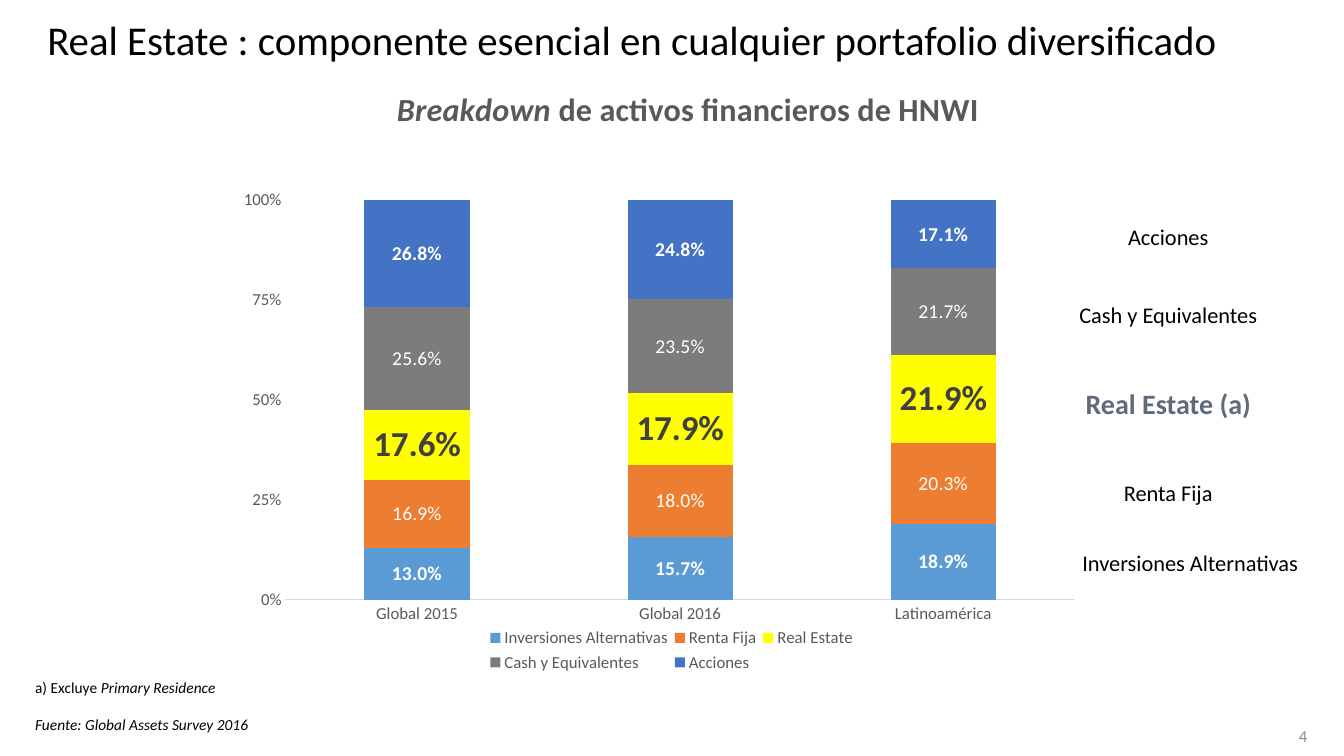
from dataclasses import dataclass

from lxml import etree
from pptx import Presentation
from pptx import util as u
from pptx.chart.data import CategoryChartData
from pptx.dml.color import RGBColor
from pptx.enum import chart as ch, text
from pptx.oxml.ns import qn


@dataclass(frozen=True)
class Theme:
    font: str = "Calibri"
    ink: str = "000000"
    axis_text: str = "595959"
    axis_line: str = "D9D9D9"
    accent: str = "5F6B7C"
    page_number: str = "8C8C8C"
    white: str = "FFFFFF"
    dark: str = "404040"
    title_size: float = 29.2
    chart_title_size: float = 23
    chart_size: float = 10
    label_size: float = 16
    accent_size: float = 20
    axis_size: float = 12
    value_size: float = 14
    value_accent_size: float = 25
    note_size: float = 11


T = Theme()


@dataclass(frozen=True)
class Box:
    left: float
    top: float
    width: float
    height: float

    def lengths(self) -> tuple:
        return tuple(u.Pt(v) for v in (self.left, self.top, self.width, self.height))


@dataclass(frozen=True)
class AssetClass:
    name: str
    values: tuple[float, ...]
    fill: str
    label_top: float
    bold: bool = False
    accent: bool = False
    label_width: float = 163


REGIONS = ("Global 2015", "Global 2016", "Latinoamérica")
ASSETS = (
    AssetClass("Inversiones Alternativas", (0.13, 0.157, 0.189), "5B9BD5", 388.8,
               bold=True, label_width=194.4),
    AssetClass("Renta Fija", (0.169, 0.18, 0.203), "ED7D31", 338.4),
    AssetClass("Real Estate", (0.176, 0.179, 0.219), "FFFF00", 272.2, bold=True, accent=True),
    AssetClass("Cash y Equivalentes", (0.256, 0.235, 0.217), "7C7C7C", 211.7),
    AssetClass("Acciones", (0.268, 0.248, 0.171), "4472C4", 155.5, bold=True),
)


def style(font, size: float, color: str, bold: bool = False, italic: bool = False) -> None:
    font.name, font.size = T.font, u.Pt(size)
    font.bold, font.italic = bold, italic
    font.color.rgb = RGBColor.from_string(color)


def add_text(s, box: Box, content: str, size: float, color: str,
             align=text.PP_ALIGN.CENTER, anchor=text.MSO_ANCHOR.TOP, bold: bool = False):
    tf = s.shapes.add_textbox(*box.lengths()).text_frame
    tf.word_wrap = True
    tf.vertical_anchor = anchor
    tf.text = content
    for p in tf.paragraphs:
        p.alignment = align
        for r in p.runs:
            style(r.font, size, color, bold)
    return tf


def set_layout(parent, index: int, box: Box, inner: bool = False) -> None:
    """Place a chart part by fractions of the chart area."""
    for old in parent.findall(qn("c:layout")):
        parent.remove(old)
    layout = etree.Element(qn("c:layout"))
    manual = etree.SubElement(layout, qn("c:manualLayout"))
    parts = [("layoutTarget", "inner")] if inner else []
    parts += [("xMode", "edge"), ("yMode", "edge"), ("x", box.left), ("y", box.top),
              ("w", box.width), ("h", box.height)]
    for tag, value in parts:
        etree.SubElement(manual, qn(f"c:{tag}")).set("val", str(value))
    parent.insert(index, layout)


def style_axes(chart) -> None:
    for axis in (chart.category_axis, chart.value_axis):
        axis.major_tick_mark = axis.minor_tick_mark = ch.XL_TICK_MARK.NONE
        axis.has_major_gridlines = False
        style(axis.tick_labels.font, T.axis_size, T.axis_text)
    line = chart.category_axis.format.line
    line.color.rgb = RGBColor.from_string(T.axis_line)
    line.width = u.Pt(0.75)
    values = chart.value_axis
    values.format.line.fill.background()
    values.minimum_scale, values.maximum_scale, values.major_unit = 0, 1, 0.25
    values.tick_labels.number_format = "0%"
    values.tick_labels.number_format_is_linked = False


def style_series(series, asset: AssetClass) -> None:
    series.format.fill.solid()
    series.format.fill.fore_color.rgb = RGBColor.from_string(asset.fill)
    labels = series.data_labels
    labels.show_value = True
    labels.number_format, labels.number_format_is_linked = "0.0%", False
    labels.position = ch.XL_LABEL_POSITION.CENTER
    style(labels.font, T.value_accent_size if asset.accent else T.value_size,
          T.dark if asset.accent else T.white, asset.bold)


def add_breakdown_chart(s) -> None:
    data = CategoryChartData(number_format="0.0%")
    data.categories = REGIONS
    for asset in ASSETS:
        data.add_series(asset.name, asset.values)
    box = Box(159.8, 56.6, 640, 427)
    chart = s.shapes.add_chart(ch.XL_CHART_TYPE.COLUMN_STACKED_100, *box.lengths(), data).chart
    style(chart.font, T.chart_size, T.ink)

    p = chart.chart_title.text_frame.paragraphs[0]
    for content, italic in (("Breakdown", True), (" de activos financieros de HNWI", False)):
        r = p.add_run()
        r.text = content
        style(r.font, T.chart_title_size, T.axis_text, True, italic)

    style_axes(chart)
    plot = chart.plots[0]
    plot.gap_width, plot.overlap, plot.vary_by_categories = 150, 100, False
    for series, asset in zip(plot.series, ASSETS):
        style_series(series, asset)

    chart.has_legend = True
    legend = chart.legend
    legend.position = ch.XL_LEGEND_POSITION.BOTTOM
    legend.include_in_layout = False
    style(legend.font, T.axis_size, T.axis_text)

    chart_xml = chart.element.find(qn("c:chart"))
    set_layout(chart_xml.find(qn("c:title")), 1, Box(0.19, 0.01, 0.65, 0.1))
    set_layout(chart_xml.find(qn("c:plotArea")), 0, Box(0.069, 0.202, 0.881, 0.669), inner=True)
    set_layout(chart_xml.find(qn("c:legend")), 1, Box(0.29, 0.91, 0.42, 0.09))


def add_notes(s) -> None:
    tf = add_text(s, Box(18, 481, 826.6, 47.5),
                  "a) Excluye \nFuente: Global Assets Survey 2016",
                  T.note_size, T.ink, text.PP_ALIGN.LEFT)
    note, source = tf.paragraphs
    r = note.add_run()
    r.text = "Primary Residence"
    style(r.font, T.note_size, T.ink, italic=True)
    source.runs[0].font.italic = True
    source.space_before = u.Pt(13.4)


def main() -> None:
    prs = Presentation()
    prs.slide_width, prs.slide_height = u.Pt(960), u.Pt(540)
    s = prs.slides.add_slide(prs.slide_layouts[6])

    title = add_text(s, Box(-13, -20.2, 928.8, 69.8),
                     "Real Estate : componente esencial en cualquier portafolio diversificado",
                     T.title_size, T.ink, anchor=text.MSO_ANCHOR.BOTTOM)
    title.paragraphs[0].line_spacing = 0.9
    add_breakdown_chart(s)
    for asset in reversed(ASSETS):
        add_text(s, Box(753, asset.label_top, asset.label_width, 31.5 if asset.accent else 26.6),
                 asset.name + (" (a)" if asset.accent else ""),
                 T.accent_size if asset.accent else T.label_size,
                 T.accent if asset.accent else T.ink, bold=asset.accent)
    add_notes(s)
    add_text(s, Box(717, 511.2, 224, 28.8), "4", T.axis_size, T.page_number,
             text.PP_ALIGN.RIGHT, text.MSO_ANCHOR.MIDDLE)
    prs.save("out.pptx")


if __name__ == "__main__":
    main()
